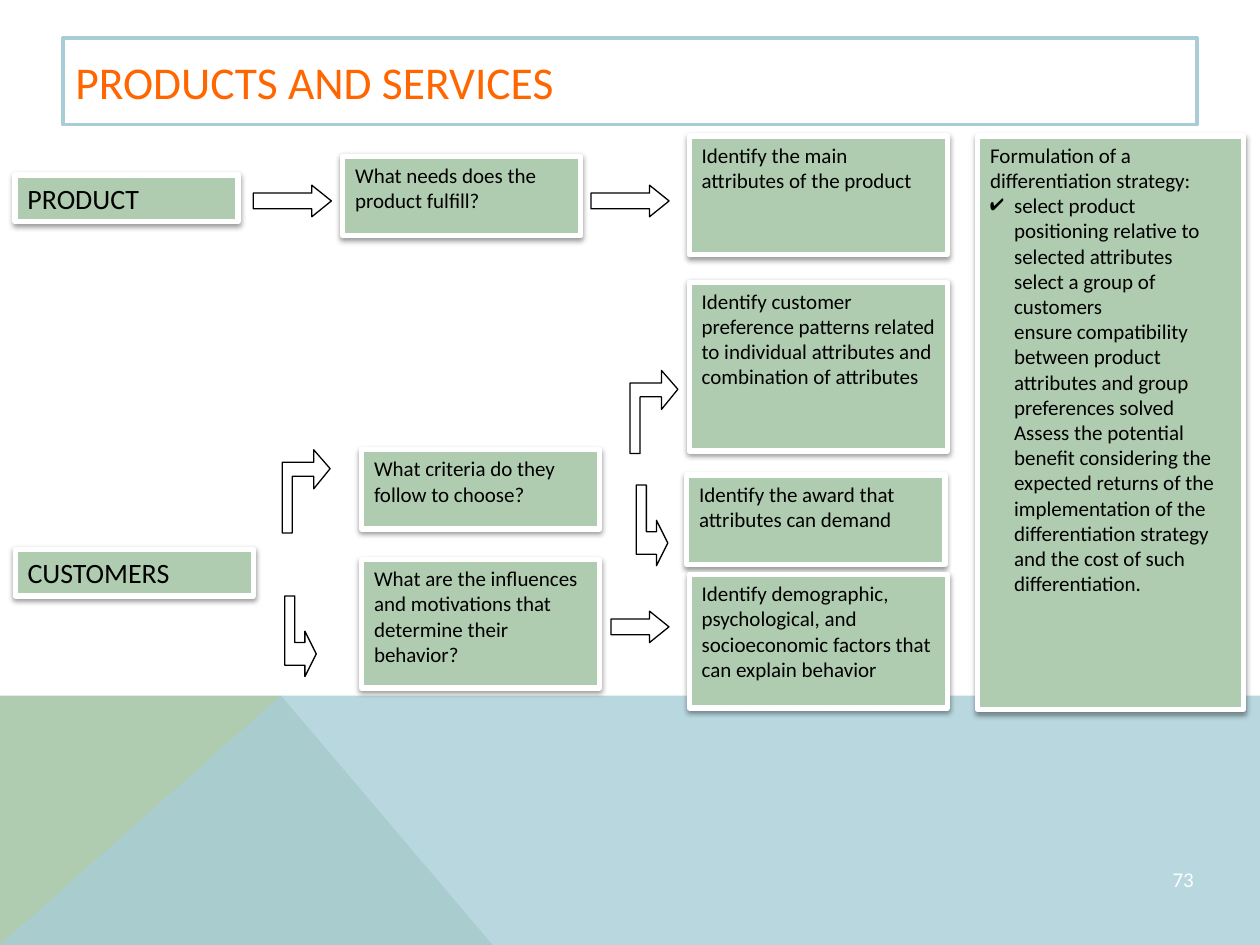
from lxml import etree
from pptx import Presentation
from pptx.dml.color import RGBColor
from pptx.enum.shapes import MSO_SHAPE
from pptx.enum.text import MSO_ANCHOR, PP_ALIGN
from pptx.oxml.ns import qn
from pptx.util import Inches, Pt

RECTANGLE = MSO_SHAPE.RECTANGLE
ELLIPSE = MSO_SHAPE.OVAL
RIGHT_ARROW = MSO_SHAPE.RIGHT_ARROW
TOP, MIDDLE = MSO_ANCHOR.TOP, MSO_ANCHOR.MIDDLE
LEFT = PP_ALIGN.LEFT

FONT = "Calibri"
COLORS = {
    "green": "B0CCB0",
    "blue": "A8CDD7",
    "white": "FFFFFF",
    "black": "000000",
    "orange": "FF6600",
}

ARROW_UP = [(0.38, 0.15), (0.25, 0.31), (0.25, 0.21), (0.08, 0.21), (0.08, 0.66),
            (0, 0.66), (0, 0.1), (0.25, 0.1), (0.25, 0)]
ARROW_DOWN = [(0.25, 0.46), (0.16, 0.28), (0.16, 0.37), (0.08, 0.37), (0.08, 0),
              (0, 0), (0, 0.55), (0.16, 0.55), (0.16, 0.64)]

STRATEGY_HEADING = "Formulation of a differentiation strategy:"
STRATEGY_STEPS = [
    "select product positioning relative to selected attributes",
    "select a group of customers",
    "ensure compatibility between product attributes and group preferences solved",
    "Assess the potential benefit considering the expected returns of the "
    "implementation of the differentiation strategy and the cost of such differentiation.",
]


def color(name):
    return RGBColor.from_string(COLORS[name])


def style(shape, fill=None, line=None, width=0.75):
    shape.shadow.inherit = False
    if fill:
        shape.fill.solid()
        shape.fill.fore_color.rgb = color(fill)
    else:
        shape.fill.background()
    if line:
        shape.line.color.rgb = color(line)
        shape.line.width = Pt(width)
    else:
        shape.line.fill.background()


def add_preset(slide, kind, box, **look):
    shape = slide.shapes.add_shape(kind, *map(Inches, box))
    style(shape, **look)
    return shape


def add_outline(slide, left, top, points, **look):
    (x, y), *rest = [(Inches(left + dx), Inches(top + dy)) for dx, dy in points]
    builder = slide.shapes.build_freeform(x, y)
    builder.add_line_segments(rest, close=True)
    shape = builder.convert_to_shape()
    style(shape, **look)
    return shape


def write(shape, paragraphs, size, font_color, anchor=TOP):
    frame = shape.text_frame
    frame.word_wrap = True
    frame.vertical_anchor = anchor
    for index, text in enumerate(paragraphs):
        paragraph = frame.paragraphs[0] if index == 0 else frame.add_paragraph()
        paragraph.text = text
        paragraph.alignment = LEFT
        paragraph.font.size = Pt(size)
        paragraph.font.name = FONT
        paragraph.font.color.rgb = color(font_color)


def add_card_shadow(shape):
    effects = shape._element.spPr.find(qn("a:effectLst"))
    shadow = etree.SubElement(effects, qn("a:outerShdw"), blurRad=str(Pt(3.1)),
                              dist=str(Pt(1.6)), dir="5400000", rotWithShape="0")
    shade = etree.SubElement(shadow, qn("a:srgbClr"), val=COLORS["black"])
    etree.SubElement(shade, qn("a:alpha"), val="38000")


def add_card(slide, box, *paragraphs, size=12):
    card = add_preset(slide, RECTANGLE, box, fill="green", line="white", width=3)
    add_card_shadow(card)
    write(card, paragraphs, size, "black")
    return card


def add_right_arrow(slide, left, top, width):
    arrow = add_preset(slide, RIGHT_ARROW, (left, top, width, 0.25),
                       fill="white", line="black")
    arrow.adjustments[0] = 0.5
    arrow.adjustments[1] = 0.62


def add_bent_arrow(slide, left, top, points):
    add_outline(slide, left, top, points, fill="white", line="black")


def add_backdrop(slide, left, top, width, height):
    peak = 2.23
    add_outline(slide, left, top, [(0, height), (0, 0), (peak, 0), (3.91, height)],
                fill="green")
    band = add_outline(slide, left, top,
                       [(0, height), (peak, 0), (width, 0), (width, height)], fill="blue")
    tint = band._element.spPr.find(qn("a:solidFill"))[0]
    etree.SubElement(tint, qn("a:alpha"), val="80000")


def add_title(slide, box):
    title = add_preset(slide, RECTANGLE, box, fill="white", line="blue", width=2)
    write(title, ["PRODUCTS AND SERVICES"], 26, "orange", MIDDLE)


def add_product_row(slide, left, top):
    add_card(slide, (left, top + 0.31, 1.77, 0.37), "PRODUCT", size=16)
    add_right_arrow(slide, left + 1.89, top + 0.39, 0.62)
    add_card(slide, (left + 2.6, top + 0.16, 1.89, 0.63),
             "What needs does the product fulfill?")
    add_right_arrow(slide, left + 4.57, top + 0.39, 0.62)
    add_card(slide, (left + 5.35, top, 2.05, 0.94),
             "Identify the main attributes of the product")


def add_customer_rows(slide, left, top):
    add_card(slide, (left, top + 2.12, 1.89, 0.37), "CUSTOMERS", size=16)
    add_bent_arrow(slide, left + 2.12, top + 1.33, ARROW_UP)
    add_bent_arrow(slide, left + 2.14, top + 2.49, ARROW_DOWN)
    add_card(slide, (left + 2.75, top + 1.33, 1.89, 0.63),
             "What criteria do they follow to choose?")
    add_card(slide, (left + 2.75, top + 2.2, 1.89, 1.02),
             "What are the influences and motivations that determine their behavior?")
    add_bent_arrow(slide, left + 4.88, top + 0.7, ARROW_UP)
    add_bent_arrow(slide, left + 4.93, top + 1.61, ARROW_DOWN)
    add_right_arrow(slide, left + 4.73, top + 2.61, 0.46)
    add_card(slide, (left + 5.35, top, 2.05, 1.34),
             "Identify customer preference patterns related to individual attributes "
             "and combination of attributes")
    add_card(slide, (left + 5.33, top + 1.53, 2.05, 0.71),
             "Identify the award that attributes can demand")
    add_card(slide, (left + 5.35, top + 2.32, 2.05, 1.06),
             "Identify demographic, psychological, and socioeconomic factors that "
             "can explain behavior")


def add_strategy(slide, box):
    card = add_card(slide, box, STRATEGY_HEADING, "\v".join(STRATEGY_STEPS))
    properties = card.text_frame.paragraphs[1]._p.get_or_add_pPr()
    properties.set("marL", str(Inches(0.19)))
    properties.set("indent", str(Inches(-0.19)))
    bullet = etree.Element(qn("a:buChar"), char="✔")
    properties.insert(0, bullet)


def add_slide_number(slide, box):
    number = add_preset(slide, ELLIPSE, box)
    write(number, ["73"], 12, "white")


def main():
    presentation = Presentation()
    presentation.slide_width = Inches(10)
    presentation.slide_height = Inches(7.5)
    slide = presentation.slides.add_slide(presentation.slide_layouts[6])
    add_backdrop(slide, 0, 5.52, 10, 1.98)
    add_title(slide, (0.5, 0.3, 9, 0.69))
    add_product_row(slide, 0.12, 1.08)
    add_customer_rows(slide, 0.12, 2.24)
    add_strategy(slide, (7.76, 1.08, 2.11, 4.55))
    add_slide_number(slide, (9.1, 6.75, 0.74, 0.53))
    presentation.save("out.pptx")


if __name__ == "__main__":
    main()
